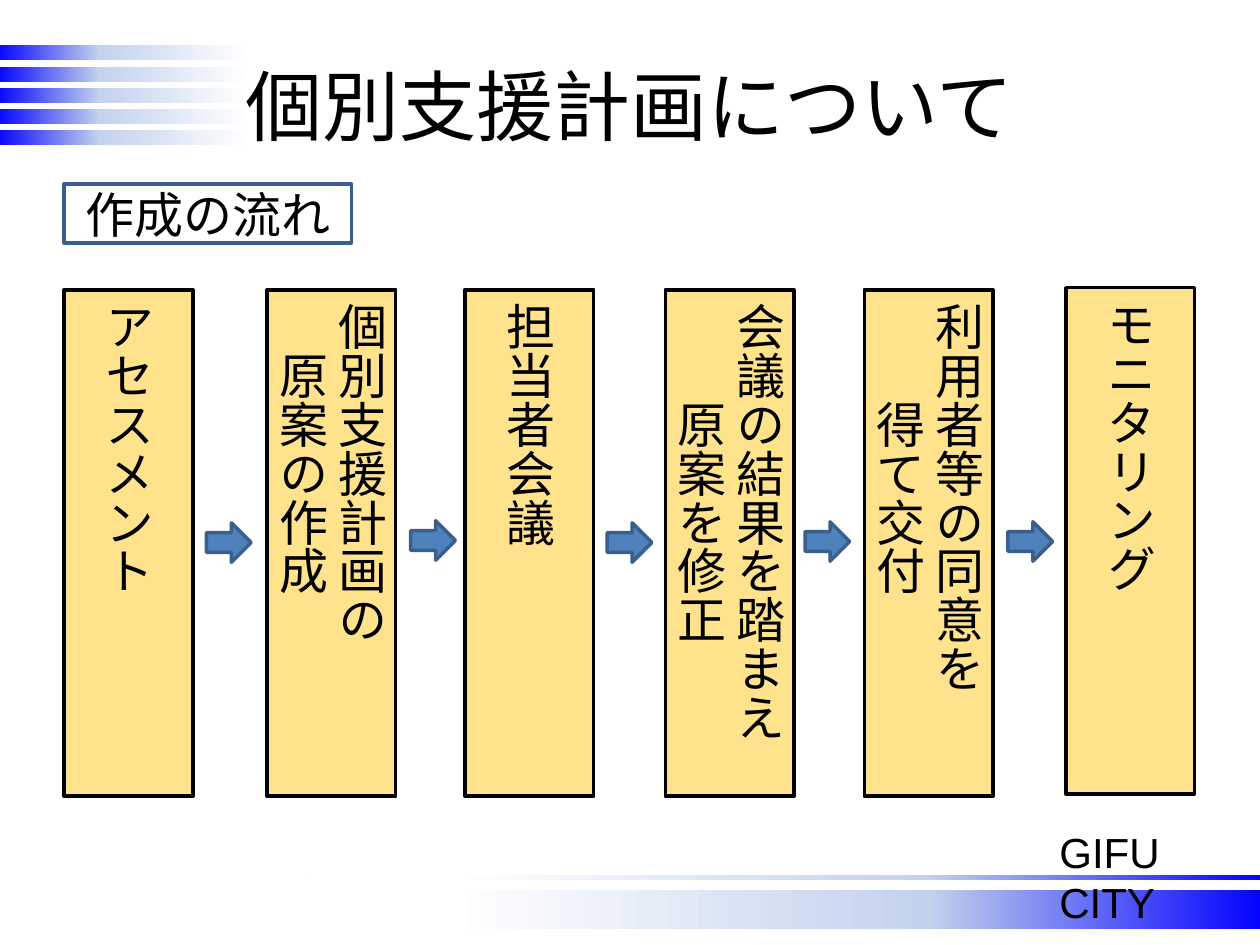
from dataclasses import dataclass

from lxml import etree
from pptx import Presentation
from pptx.dml.color import RGBColor
from pptx.enum.shapes import MSO_SHAPE
from pptx.enum.text import MSO_ANCHOR, PP_ALIGN
from pptx.oxml.ns import qn
from pptx.shapes.autoshape import Shape
from pptx.slide import Slide
from pptx.text.text import TextFrame
from pptx.util import Pt

RECTANGLE = MSO_SHAPE.RECTANGLE
RIGHT_ARROW = MSO_SHAPE.RIGHT_ARROW
MIDDLE = MSO_ANCHOR.MIDDLE
CENTER = PP_ALIGN.CENTER
LEFT = PP_ALIGN.LEFT


@dataclass(frozen=True)
class Theme:
    ink: str = "000000"
    step: str = "FFC000"
    step_opacity: int = 45
    arrow: str = "4F81BD"
    outline: str = "3A5F8C"
    bar_stops: tuple[tuple[int, str], ...] = ((0, "0000FF"), (35, "C2D1ED"), (85, "FFFFFF"))
    font: str = "Calibri"
    footer_font: str = "Arial"
    title_size: float = 44
    label_size: float = 28
    footer_size: float = 24
    line_width: float = 2


@dataclass(frozen=True)
class Area:
    left: float
    top: float
    width: float
    height: float


@dataclass(frozen=True)
class Step:
    left: float
    lines: tuple[str, ...]
    top: float = 165.6


@dataclass(frozen=True)
class Arrow:
    left: float
    top: float


THEME = Theme()
STEP_WIDTH, STEP_HEIGHT = 73.6, 289.4
ARROW_WIDTH, ARROW_HEIGHT = 25.5, 22.5

STEPS = (
    Step(36.7, ("アセスメント",)),
    Step(152.6, ("個別支援計画の", "原案の作成")),
    Step(265.7, ("担当者会議",)),
    Step(380.2, ("会議の結果を踏まえ", "原案を修正")),
    Step(493.9, ("利用者等の同意を", "得て交付")),
    Step(609.1, ("モニタリング",), 164.4),
)
ARROWS = (
    Arrow(118, 298.8),
    Arrow(234.7, 297.6),
    Arrow(347, 298.8),
    Arrow(460.1, 298.2),
    Arrow(576, 298.2),
)


def place(shape: Shape, area: Area) -> None:
    shape.left, shape.top = Pt(area.left), Pt(area.top)
    shape.width, shape.height = Pt(area.width), Pt(area.height)


def add_box(slide: Slide, preset: MSO_SHAPE, area: Area) -> Shape:
    box = slide.shapes.add_shape(
        preset, Pt(area.left), Pt(area.top), Pt(area.width), Pt(area.height)
    )
    box.shadow.inherit = False
    return box


def outline(box: Shape, color: str) -> None:
    box.line.color.rgb = RGBColor.from_string(color)
    box.line.width = Pt(THEME.line_width)


def write(frame: TextFrame, lines: tuple[str, ...], font: str, size: float,
          alignment: PP_ALIGN) -> None:
    for index, line in enumerate(lines):
        para = frame.add_paragraph() if index else frame.paragraphs[0]
        para.text = line
        para.alignment = alignment
        para.font.name = font
        para.font.size = Pt(size)
        para.font.color.rgb = RGBColor.from_string(THEME.ink)


def add_bar(slide: Slide, area: Area, rotation: float = 0) -> None:
    bar = add_box(slide, RECTANGLE, area)
    bar.rotation = rotation
    bar.line.fill.background()
    bar.fill.gradient()
    bar.fill.gradient_angle = 0
    stops = bar.element.spPr.find(qn("a:gradFill")).find(qn("a:gsLst"))
    for stop in list(stops):
        stops.remove(stop)
    for position, color in THEME.bar_stops:
        stop = etree.SubElement(stops, qn("a:gs"), pos=str(position * 1000))
        etree.SubElement(stop, qn("a:srgbClr"), val=color)


def add_footer(slide: Slide) -> None:
    footer = slide.shapes.add_textbox(Pt(598.3), Pt(468.7), Pt(115.2), Pt(36))
    footer.text_frame.word_wrap = True
    write(footer.text_frame, ("GIFU CITY",), THEME.footer_font, THEME.footer_size, LEFT)


def add_heading(slide: Slide) -> None:
    heading = add_box(slide, RECTANGLE, Area(36.7, 105.1, 164.2, 33.8))
    heading.fill.background()
    outline(heading, THEME.outline)
    heading.text_frame.vertical_anchor = MIDDLE
    write(heading.text_frame, ("作成の流れ",), THEME.font, THEME.label_size, CENTER)


def add_step(slide: Slide, step: Step) -> None:
    box = add_box(slide, RECTANGLE, Area(step.left, step.top, STEP_WIDTH, STEP_HEIGHT))
    box.fill.solid()
    box.fill.fore_color.rgb = RGBColor.from_string(THEME.step)
    color = box.element.spPr.find(qn("a:solidFill")).find(qn("a:srgbClr"))
    etree.SubElement(color, qn("a:alpha"), val=str(THEME.step_opacity * 1000))
    outline(box, THEME.ink)
    frame = box.text_frame
    frame.vertical_anchor = MIDDLE
    frame._txBody.find(qn("a:bodyPr")).set("vert", "eaVert")
    write(frame, step.lines, THEME.font, THEME.label_size, CENTER)


def add_arrow(slide: Slide, arrow: Arrow) -> None:
    shape = add_box(slide, RIGHT_ARROW, Area(arrow.left, arrow.top, ARROW_WIDTH, ARROW_HEIGHT))
    shape.fill.solid()
    shape.fill.fore_color.rgb = RGBColor.from_string(THEME.arrow)
    outline(shape, THEME.outline)


def main() -> None:
    deck = Presentation()
    deck.slide_width, deck.slide_height = Pt(720), Pt(540)
    slide = deck.slides.add_slide(deck.slide_layouts[5])

    add_bar(slide, Area(175.7, 508.3, 547.2, 22.5), 180)
    for row in range(5):
        add_bar(slide, Area(-2.9, 26 + 12.05 * row, 170, 8.6))
    add_bar(slide, Area(175, 499.7, 547.2, 2.9), 180)
    add_footer(slide)

    title = slide.shapes.title
    place(title, Area(36, 15.1, 648, 90))
    title.text_frame.vertical_anchor = MIDDLE
    write(title.text_frame, ("個別支援計画について",), THEME.font, THEME.title_size, CENTER)
    slide.shapes._spTree.append(title.element)

    add_heading(slide)
    for step in STEPS:
        add_step(slide, step)
    for arrow in ARROWS:
        add_arrow(slide, arrow)
    deck.save("out.pptx")


if __name__ == "__main__":
    main()
